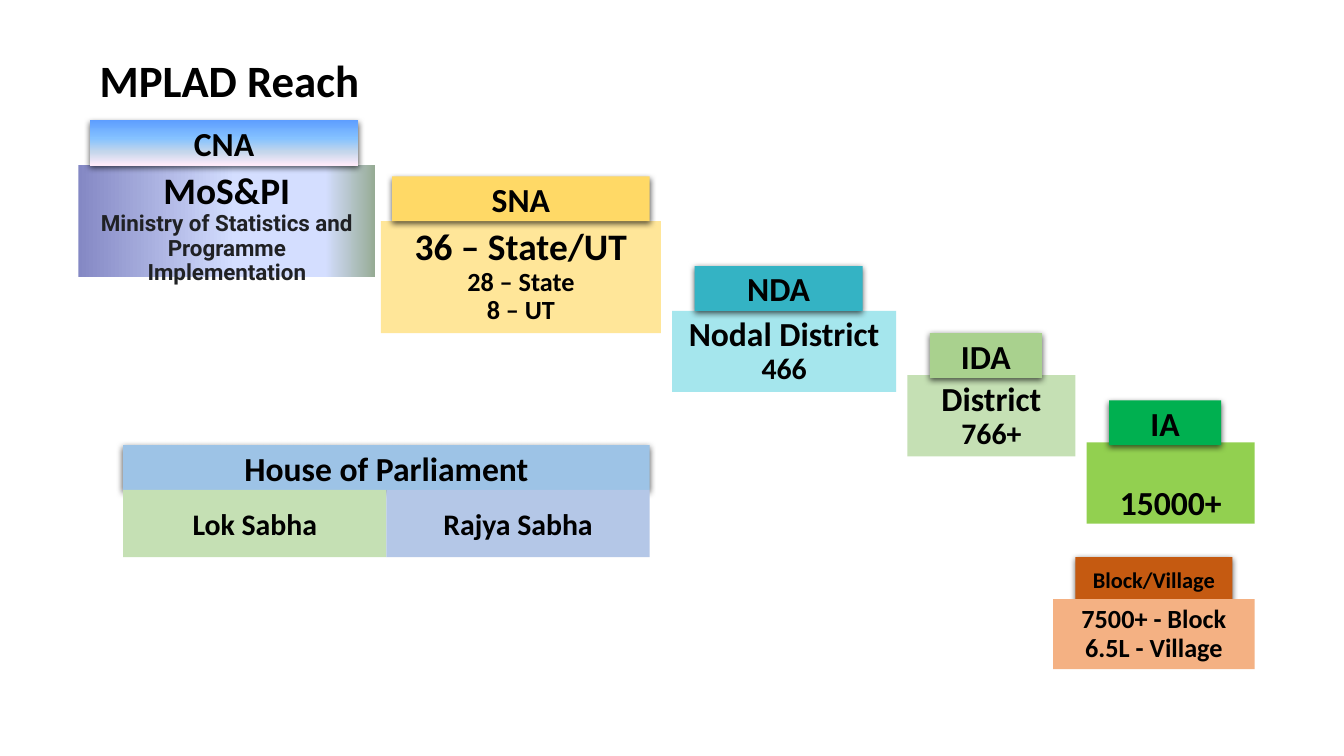
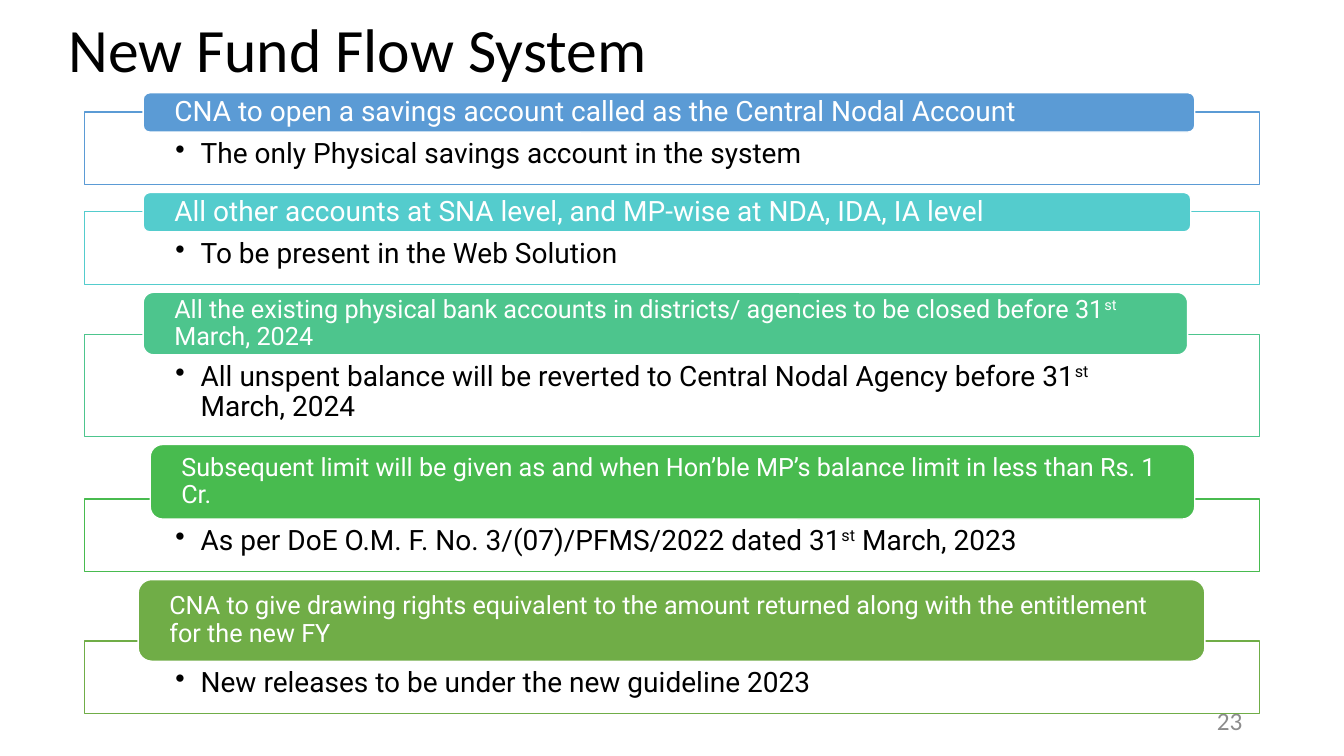
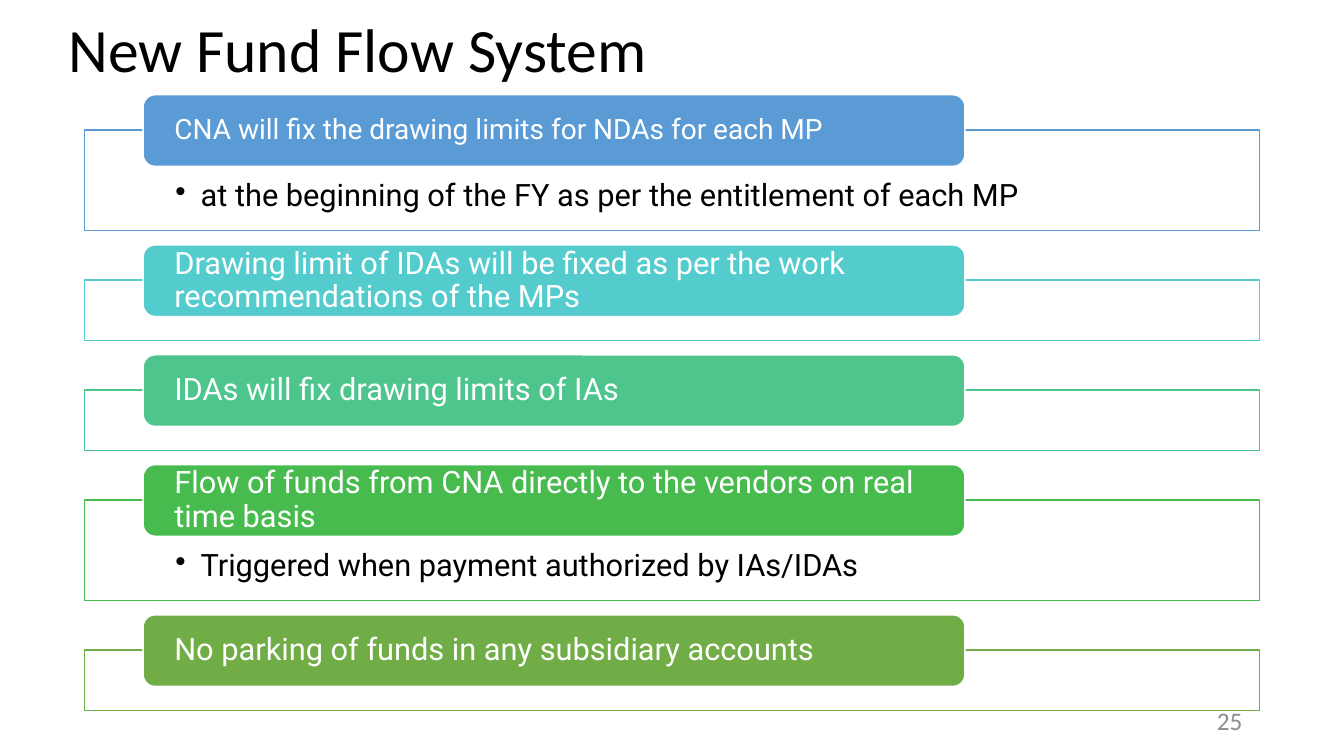
from lxml.etree import SubElement
from pptx import Presentation
from pptx.dml.color import RGBColor
from pptx.enum.shapes import MSO_SHAPE
from pptx.enum.text import MSO_ANCHOR, PP_ALIGN
from pptx.oxml.ns import qn
from pptx.util import Emu, Inches, Pt

WIDTH, HEIGHT = 13.33, 7.5
UNIT = 1 / 9  # inches per grid unit on the reach slide
TAG_ROWS = 4
BODY_INSETS = (0.13, 0.07, 0.13, 0.07)

COLORS = {
    "black": "000000", "white": "FFFFFF", "ink": "202124", "number": "8C8C8C",
    "sna": "FFD966", "sna_light": "FFE699", "nda": "34B3C4", "nda_light": "A5E6ED",
    "ida": "A9D18E", "ida_light": "C5E0B4", "ia": "00B050", "ia_light": "92D050",
    "block": "C55A11", "block_light": "F4B183", "house": "9DC3E6", "rajya": "B4C7E7",
    "blue": "5B9BD5", "teal": "54CCCD", "mint": "4DC58D", "green": "48BB4F",
    "olive": "70AD47",
}
ACCENTS = ("blue", "teal", "mint", "green", "olive")
# name: (clockwise angle, ((position in percent, colour), ...))
GRADIENTS = {
    "cna": (90, ((0, "5E9EFF"), (40, "85C2FF"), (70, "C4D6EB"), (100, "FFEBFA"))),
    "cna_light": (0, ((0, "8488C4"), (53, "D4DEFF"), (83, "D4DEFF"), (100, "96AB94"))),
}

# Boxes are left, top, width, height in grid units.
LEVELS = [
    {"tag": "CNA", "fill": "cna", "tag_at": (8, 10.75, 24), "body_at": (7, 14.75, 26.5, 10),
     "lines": [("MoS&PI", 26.7),
               ("Ministry of Statistics and Programme Implementation", 16, "Roboto", "ink")]},
    {"tag": "SNA", "fill": "sna", "tag_at": (35, 15.75, 23), "body_at": (34, 19.75, 25, 10),
     "lines": [("36 – State/UT", 26.7), ("28 – State", 18.7), ("8 – UT", 18.7)]},
    {"tag": "NDA", "fill": "nda", "tag_at": (62, 23.75, 15), "body_at": (60, 27.75, 20, 7.25),
     "lines": [("Nodal District", 24), ("466", 21.3)]},
    {"tag": "IDA", "fill": "ida", "tag_at": (83, 29.75, 10), "body_at": (81, 33.5, 15, 7.25),
     "lines": [("District", 24), ("766+", 21.3)]},
    {"tag": "IA", "fill": "ia", "tag_at": (99, 35.75, 10), "body_at": (97, 39.5, 15, 7.25),
     "lines": [("15000+", 24)], "insets": (0.13, 0.44, 0.13, 0)},
    {"tag": "Block/Village", "fill": "block", "tag_at": (96, 49.75, 14),
     "body_at": (94, 53.5, 18, 6.25), "tag_size": 16, "body_in_front": True,
     "lines": [("7500+ - Block", 18.7), ("6.5L - Village", 18.7)]},
]
HOUSE = ("House of Parliament", (11, 39.75, 47))
CHAMBERS = [("Lok Sabha", "ida_light"), ("Rajya Sabha", "rajya")]
CHAMBER_ROWS = 6

# Carets enclose superscripts. Heights, gaps and overlaps are in inches.
FLOW_TITLE = "New Fund Flow System"
FLOW_SLIDES = [
    {"number": "23", "top": 0.92, "gap": 0.08, "overlap": 0.2, "inset": 0.27, "note_size": 20,
     "sections": [
         {"head": "CNA to open a savings account called as the Central Nodal Account",
          "note": "The only Physical savings account in the system",
          "size": 20, "left": 1.42, "width": 10.43, "head_h": 0.39, "frame_h": 0.72},
         {"head": "All other accounts at SNA level, and MP-wise at NDA, IDA, IA level",
          "note": "To be present in the Web Solution",
          "size": 20, "left": 1.42, "width": 10.39, "head_h": 0.39, "frame_h": 0.72},
         {"head": "All the existing physical bank accounts in districts/ agencies to be "
                  "closed before 31^st^ March, 2024",
          "note": "All unspent balance will be reverted to Central Nodal Agency before "
                  "31^st^ March, 2024",
          "size": 18, "left": 1.42, "width": 10.36, "head_h": 0.62, "frame_h": 1.01},
         {"head": "Subsequent limit will be given as and when Hon’ble MP’s balance limit in "
                  "less than Rs. 1 Cr.",
          "note": "As per DoE O.M. F. No. 3/(07)/PFMS/2022 dated 31^st^ March, 2023",
          "size": 18, "left": 1.49, "width": 10.36, "head_h": 0.74, "frame_h": 0.72},
         {"head": "CNA to give drawing rights equivalent to the amount returned along with "
                  "the entitlement for the new FY",
          "note": "New releases to be under the new guideline 2023",
          "size": 18, "left": 1.37, "width": 10.58, "head_h": 0.81, "frame_h": 0.72},
     ]},
    {"number": "25", "top": 0.94, "gap": 0.14, "overlap": 0.36, "inset": 0.5, "note_size": 22,
     "sections": [
         {"head": "CNA will fix the drawing limits for NDAs for each MP", "size": 20,
          "note": "at the beginning of the FY as per the entitlement of each MP"},
         {"head": "Drawing limit of IDAs will be fixed as per the work recommendations "
                  "of the MPs"},
         {"head": "IDAs will fix drawing limits of IAs"},
         {"head": "Flow of funds from CNA directly to the vendors on real time basis",
          "note": "Triggered when payment authorized by IAs/IDAs"},
         {"head": "No parking of funds in any subsidiary accounts"},
     ]},
]
FRAME_LEFT, FRAME_WIDTH = 0.84, 11.65


def rgb(name):
    return RGBColor.from_string(COLORS[name])


def set_frame(shape, anchor=MSO_ANCHOR.MIDDLE, insets=(0.1, 0.05, 0.1, 0.05)):
    frame = shape.text_frame
    frame.word_wrap = True
    frame.vertical_anchor = anchor
    frame.margin_left, frame.margin_top, frame.margin_right, frame.margin_bottom = map(
        Inches, insets)


def add_text(shape, text, *, size, font="Calibri", color="black", bold=False,
             align=PP_ALIGN.LEFT, spacing=0.9, bullet=False):
    """Add one paragraph; parts between carets are superscript."""
    frame = shape.text_frame
    paragraph = frame.add_paragraph() if frame.text else frame.paragraphs[0]
    paragraph.alignment = align
    paragraph.line_spacing = spacing
    if bullet:
        props = paragraph._p.get_or_add_pPr()
        props.set("marL", str(Inches(0.25)))
        props.set("indent", str(-Inches(0.25)))
        SubElement(props, qn("a:buChar"), char="•")
    for index, part in enumerate(text.split("^")):
        run = paragraph.add_run()
        run.text = part
        run.font.size, run.font.name, run.font.bold = Pt(size), font, bold
        run.font.color.rgb = rgb(color)
        if index % 2:
            run._r.get_or_add_rPr().set("baseline", "30000")


def paint_gradient(shape, name):
    angle, stops = GRADIENTS[name]
    shape.fill.gradient()
    shape.fill.gradient_angle = -angle % 360
    stop_list = shape._element.spPr.find(".//" + qn("a:gsLst"))
    for old_stop in list(stop_list):
        stop_list.remove(old_stop)
    for position, color in stops:
        stop = SubElement(stop_list, qn("a:gs"), pos=str(position * 1000))
        SubElement(stop, qn("a:srgbClr"), val=color)


def add_box(slide, box, fill, line=None, kind=MSO_SHAPE.RECTANGLE):
    shape = slide.shapes.add_shape(kind, *map(Inches, box))
    shape.shadow.inherit = False
    if fill in GRADIENTS:
        paint_gradient(shape, fill)
    else:
        shape.fill.solid()
        shape.fill.fore_color.rgb = rgb(fill)
    if line:
        shape.line.color.rgb = rgb(line)
        shape.line.width = Pt(1)
    else:
        shape.line.fill.background()
    return shape


def add_label(slide, box, text, **style):
    label = slide.shapes.add_textbox(*map(Inches, box))
    set_frame(label)
    add_text(label, text, **style)


def on_grid(*box):
    return [value * UNIT for value in box]


def cast_shadow(shape):
    effects = shape._element.spPr.find(qn("a:effectLst"))
    shadow = SubElement(effects, qn("a:outerShdw"), blurRad=str(Pt(4.5)), dist=str(Pt(1.5)),
                        dir="5400000", algn="ctr", rotWithShape="0")
    color = SubElement(shadow, qn("a:srgbClr"), val=COLORS["black"])
    SubElement(color, qn("a:alpha"), val="63000")


def add_tag(slide, text, place, fill, size=24):
    tag = add_box(slide, on_grid(*place, TAG_ROWS), fill)
    cast_shadow(tag)
    set_frame(tag)
    add_text(tag, text, size=size, bold=True, align=PP_ALIGN.CENTER, spacing=1.0)


def add_body(slide, level):
    body = add_box(slide, on_grid(*level["body_at"]), level["fill"] + "_light")
    set_frame(body, MSO_ANCHOR.TOP, level.get("insets", BODY_INSETS))
    for text, size, *look in level["lines"]:
        font, color = look or ("Calibri", "black")
        add_text(body, text, size=size, font=font, color=color, bold=True,
                 align=PP_ALIGN.CENTER)


def build_reach(slide):
    add_label(slide, (0.89, 0.1, 11.5, 1.45), "MPLAD Reach", size=32, bold=True)
    for level in LEVELS:
        if not level.get("body_in_front"):
            add_body(slide, level)
        add_tag(slide, level["tag"], level["tag_at"], level["fill"], level.get("tag_size", 24))
        if level.get("body_in_front"):
            add_body(slide, level)

    title, (left, top, width) = HOUSE
    add_tag(slide, title, (left, top, width), "house")
    share = width / len(CHAMBERS)
    for column, (name, fill) in enumerate(CHAMBERS):
        chamber = add_box(
            slide, on_grid(left + column * share, top + TAG_ROWS, share, CHAMBER_ROWS), fill)
        set_frame(chamber)
        add_text(chamber, name, size=21.3, bold=True, align=PP_ALIGN.CENTER, spacing=1.0)


def build_flow(slide, flow):
    add_label(slide, (0.58, 0.17, 11.5, 0.71), FLOW_TITLE, size=44)
    add_label(slide, (9.42, 6.95, 3, 0.4), flow["number"], size=18, color="number",
              align=PP_ALIGN.RIGHT, spacing=1.0)
    top = flow["top"]
    for section, accent in zip(flow["sections"], ACCENTS):
        note = section.get("note")
        head_height = section.get("head_h", 0.71)
        frame_height = section.get("frame_h", 1 if note else 0.6)
        frame_top = top + head_height - flow["overlap"]
        frame = add_box(slide, (FRAME_LEFT, frame_top, FRAME_WIDTH, frame_height),
                        "white", accent)
        if note:
            set_frame(frame, MSO_ANCHOR.TOP, (0.9, flow["inset"], 0.9, 0.16))
            add_text(frame, note, size=flow["note_size"], font="Roboto", bullet=True)

        head = add_box(slide, (section.get("left", 1.42), top, section.get("width", 8.15),
                               head_height),
                       accent, "white", MSO_SHAPE.ROUNDED_RECTANGLE)
        side = 0.31 - 0.05 * head_height  # rounded corners already inset the text
        set_frame(head, insets=(side, 0, side, 0))
        add_text(head, section["head"], size=section.get("size", 22), font="Roboto",
                 color="white")
        top = frame_top + frame_height + flow["gap"]


def main():
    deck = Presentation()
    deck.slide_width, deck.slide_height = Inches(WIDTH), Inches(HEIGHT)
    blank = deck.slide_layouts[6]
    build_reach(deck.slides.add_slide(blank))
    for flow in FLOW_SLIDES:
        build_flow(deck.slides.add_slide(blank), flow)
    deck.save("out.pptx")


if __name__ == "__main__":
    main()
